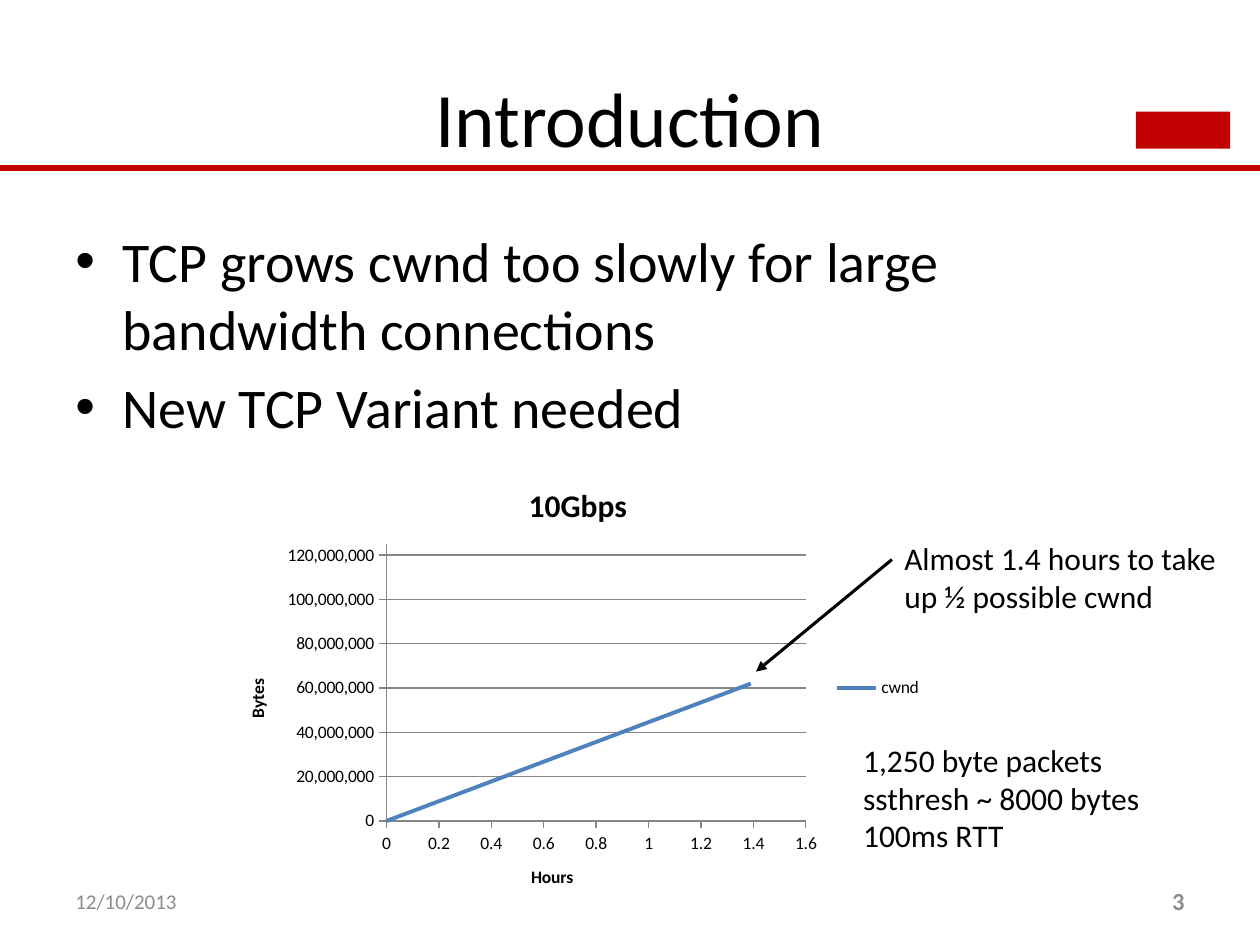
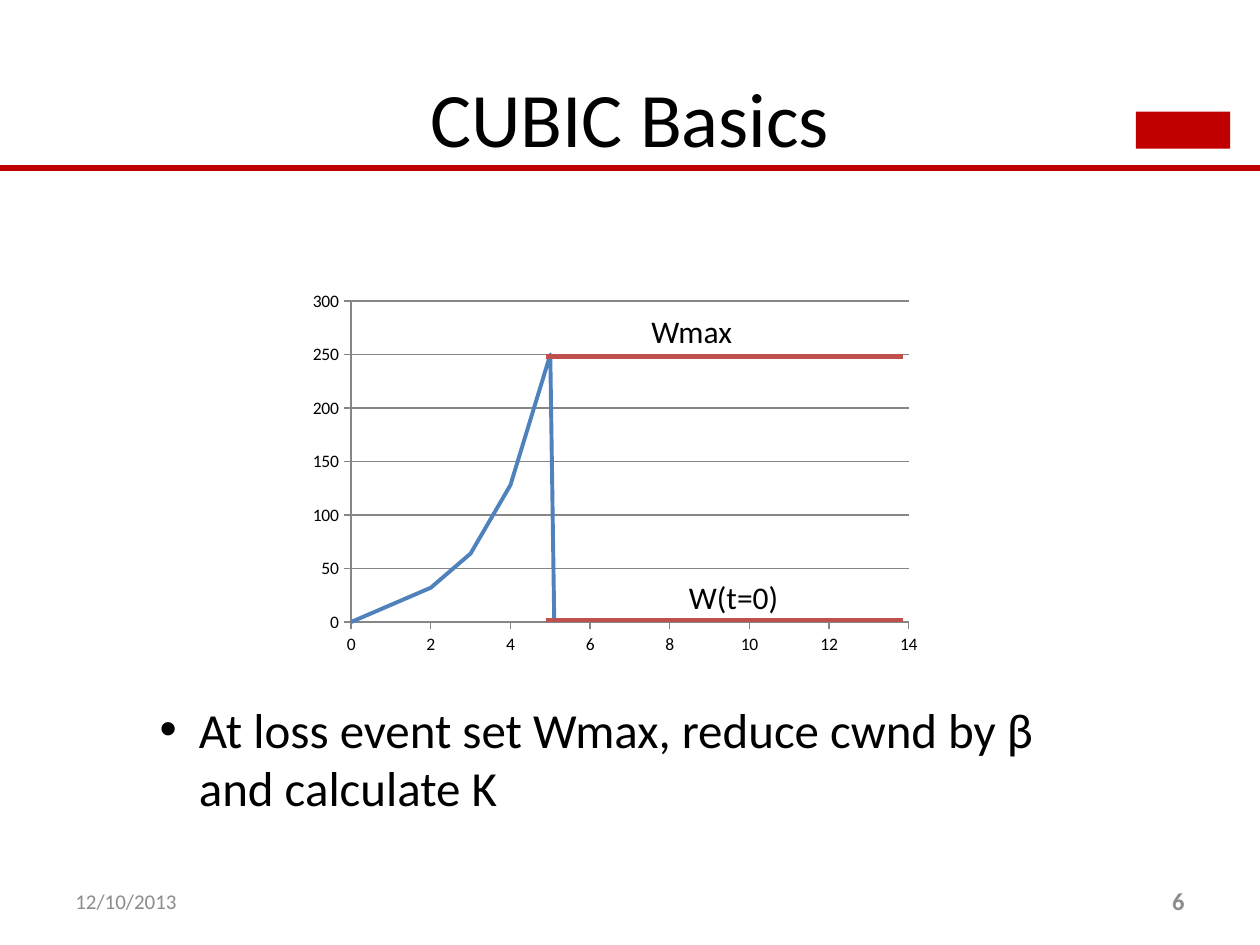
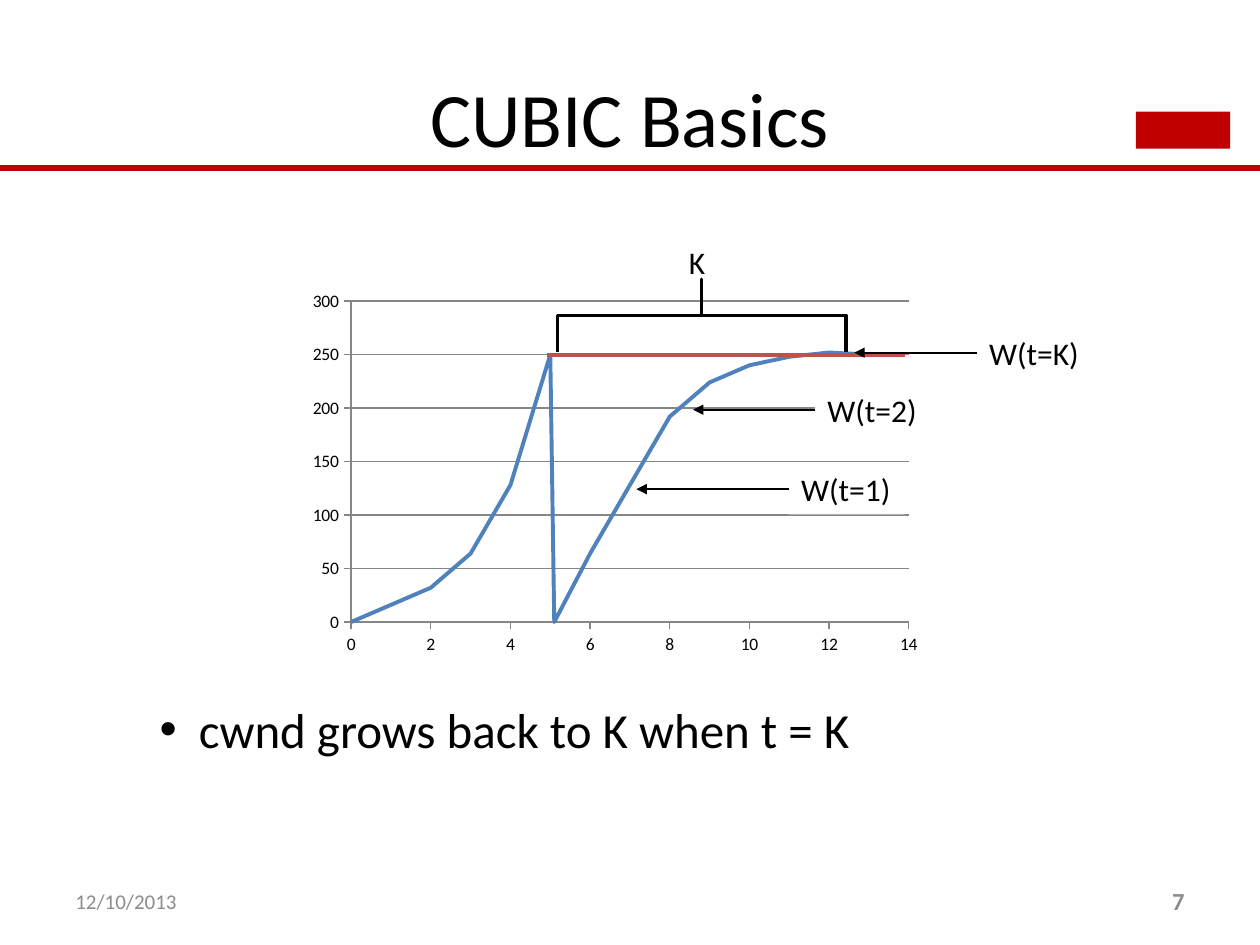
from dataclasses import dataclass

from lxml import etree
from pptx import Presentation
from pptx.chart import data
from pptx.dml import color
from pptx.enum import chart as kinds, shapes, text
from pptx.oxml import ns
from pptx.util import Cm, Pt


@dataclass(frozen=True)
class Theme:
    font: str = "Calibri"
    ink: color.RGBColor = color.RGBColor(0, 0, 0)
    paper: color.RGBColor = color.RGBColor(255, 255, 255)
    band: color.RGBColor = color.RGBColor(0xC0, 0, 0)
    mute: color.RGBColor = color.RGBColor(0x8C, 0x8C, 0x8C)
    grid: color.RGBColor = color.RGBColor(0x86, 0x86, 0x86)
    curve: color.RGBColor = color.RGBColor(0x4F, 0x81, 0xBD)
    level: color.RGBColor = color.RGBColor(0xC0, 0x50, 0x4D)
    title: int = 44
    body: int = 32
    point: int = 28
    label: int = 18
    page: int = 14
    date: int = 12
    tick: int = 10


look = Theme()
align = text.PP_ALIGN
middle = text.MSO_ANCHOR.MIDDLE


def write(slide, words, place, size, tint=look.ink, bold=False, side=align.LEFT,
          anchor=text.MSO_ANCHOR.TOP, wrap=True, indent=0, fill=None):
    box = slide.shapes.add_textbox(*map(Cm, place))
    frame = box.text_frame
    frame.text = words
    frame.word_wrap = wrap
    frame.vertical_anchor = anchor
    if fill is not None:
        box.fill.solid()
        box.fill.fore_color.rgb = fill
    for rank, para in enumerate(frame.paragraphs):
        para.alignment = side
        if indent:
            props = para._p.get_or_add_pPr()
            props.set("marL", str(Cm(indent)))
            props.set("indent", str(-Cm(indent)))
            etree.SubElement(props, ns.qn("a:buFont"), typeface="Arial")
            etree.SubElement(props, ns.qn("a:buChar"), char="•")
            if rank:
                para.space_before = Pt(size * 0.2)
        for run in para.runs:
            run.font.name = look.font
            run.font.size = Pt(size)
            run.font.bold = bold
            run.font.color.rgb = tint


def draw(slide, ends, width, tint=look.ink, arrow=False):
    line = slide.shapes.add_connector(shapes.MSO_CONNECTOR.STRAIGHT, *map(Cm, ends))
    line.line.color.rgb = tint
    line.line.width = Pt(width)
    if arrow:
        etree.SubElement(line.line._get_or_add_ln(), ns.qn("a:tailEnd"), type="triangle")
    etree.SubElement(line._element.spPr, ns.qn("a:effectLst"))


deck = Presentation()
deck.slide_width = Cm(25.4)
deck.slide_height = Cm(19.05)

rise = [(0, 0), (1, 16), (2, 32), (3, 64), (4, 128), (5, 250), (5.1, 0)]
regain = [(6, 64), (7, 128), (8, 192), (9, 224), (10, 240), (11, 248), (12, 252), (13, 250)]
growth = [(0, 0)] * 13 + [(1.39, 62000000)] * 4
large = (4.45, 9.32, 14.4, 9.09)
small = (6.05, 5.72, 12.7, 7.62)
plans = [
    ("Introduction", "3", "cwnd", growth, large),
    ("CUBIC Basics", "6", "Series 1", rise, small),
    ("CUBIC Basics", "7", "Series 1", rise + regain, small),
]

charts = []
for title, page, name, points, place in plans:
    slide = deck.slides.add_slide(deck.slide_layouts[6])
    block = slide.shapes.add_shape(
        shapes.MSO_SHAPE.RECTANGLE, *map(Cm, (22.9, 2.25, 1.9, 0.75)))
    block.shadow.inherit = False
    block.fill.solid()
    block.fill.fore_color.rgb = look.band
    block.line.fill.background()
    draw(slide, (0, 3.38, 25.4, 3.38), 3.25, look.band)
    write(slide, title, (1.27, 0.76, 22.86, 3.18), look.title, side=align.CENTER, anchor=middle)
    write(slide, "12/10/2013", (1.27, 17.65, 5.92, 1.02), look.date, look.mute, anchor=middle)
    write(slide, page, (18.21, 17.65, 5.92, 1.02), look.page, look.mute, True,
          align.RIGHT, middle)

    source = data.XyChartData()
    series = source.add_series(name)
    for x, y in points:
        series.add_data_point(x, y)
    chart = slide.shapes.add_chart(
        kinds.XL_CHART_TYPE.XY_SCATTER_LINES_NO_MARKERS, *map(Cm, place), source).chart
    chart.font.name = look.font
    chart.font.size = Pt(look.tick)
    chart.font.color.rgb = look.ink
    chart.has_title = False
    chart.has_legend = False
    plot = chart.plots[0]
    plot.vary_by_categories = False
    curve = plot.series[0]
    curve.smooth = False
    curve.format.line.color.rgb = look.curve
    curve.format.line.width = Pt(2.25)
    across, up = chart.category_axis, chart.value_axis
    across.has_major_gridlines = False
    up.has_major_gridlines = True
    for part in (across, up, up.major_gridlines):
        part.format.line.color.rgb = look.grid
        part.format.line.width = Pt(0.75)
    for axis in (across, up):
        axis.major_tick_mark = kinds.XL_TICK_MARK.OUTSIDE
        axis.minor_tick_mark = kinds.XL_TICK_MARK.NONE
    charts.append(chart)

intro, loss, regrow = deck.slides

speed = charts[0]
speed.has_title = True
speed.has_legend = True
speed.legend.position = kinds.XL_LEGEND_POSITION.RIGHT
speed.legend.include_in_layout = False
speed.value_axis.minimum_scale = 0
speed.value_axis.maximum_scale = 125000000
speed.value_axis.tick_labels.number_format = "#,##0"
speed.value_axis.tick_labels.number_format_is_linked = False
for owner, words, size in (
    (speed, "10Gbps", look.label),
    (speed.category_axis, "Hours", look.tick),
    (speed.value_axis, "Bytes", look.tick),
):
    head = owner.chart_title if owner is speed else owner.axis_title
    head.text_frame.text = words
    font = head.text_frame.paragraphs[0].runs[0].font
    font.name = look.font
    font.size = Pt(size)
    font.bold = True
    font.color.rgb = look.ink
for chart in charts[1:]:
    chart.category_axis.maximum_scale = 14

write(intro, "TCP grows cwnd too slowly for large bandwidth connections\nNew TCP Variant needed",
      (1.27, 4.45, 22.86, 12.57), look.body, indent=0.95)
write(intro, "1,250 byte packets\nssthresh ~ 8000 bytes\n100ms RTT",
      (17.15, 14.81, 6.15, 2.57), look.label, wrap=False)
draw(intro, (17.98, 11.28, 15.24, 13.54), 1.75, arrow=True)
write(intro, "Almost 1.4 hours to take up ½ possible cwnd", (17.98, 10.74, 7.19, 1.8), look.label)

for y in (7.19, 12.5):
    draw(loss, (11, y, 18.21, y), 2.5, look.level)
for words, place in (
    ("Wmax", (12.88, 6.17, 2.16, 1.02)),
    ("W(t=0)", (13.64, 11.53, 2.34, 1.02)),
):
    write(loss, words, place, look.label, wrap=False)

brace = regrow.shapes.add_shape(
    shapes.MSO_SHAPE.RIGHT_BRACE, *map(Cm, (13.41, 3.45, 1.47, 5.82)))
brace.rotation = 270
brace.adjustments[0] = 0
brace.adjustments[1] = 0.5
brace.shadow.inherit = False
brace.fill.background()
brace.line.color.rgb = look.ink
brace.line.width = Pt(1.75)
write(regrow, "K", (13.64, 4.78, 1.07, 1.02), look.label)
draw(regrow, (11.02, 7.16, 18.24, 7.16), 2.5, look.level)
for words, x, y, tip in (
    ("W(t=1)", 15.9, 9.35, 12.83),
    ("W(t=2)", 16.43, 7.75, 13.97),
    ("W(t=K)", 19.69, 6.6, 17.22),
):
    write(regrow, words, (x, y, 2.34, 1.02), look.label, wrap=False, fill=look.paper)
    draw(regrow, (x, y + 0.51, tip, y + 0.51), 1.25, arrow=True)

for slide, words, height in (
    (loss, "At loss event set Wmax, reduce cwnd by β and calculate K", 3.43),
    (regrow, "cwnd grows back to K when t = K", 2.24),
):
    write(slide, words, (2.97, 13.97, 19.05, height), look.point, indent=0.79)

deck.save("out.pptx")
